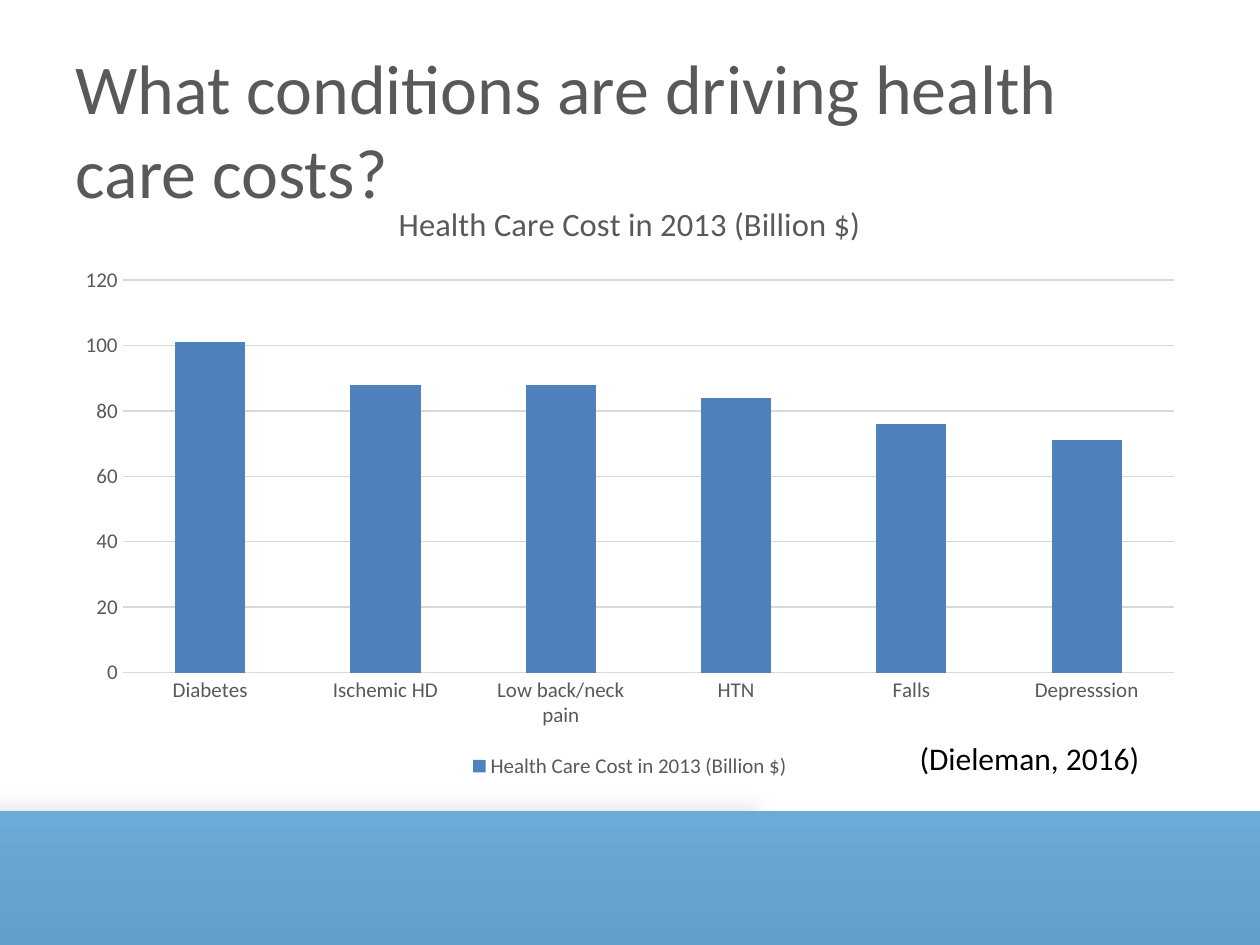
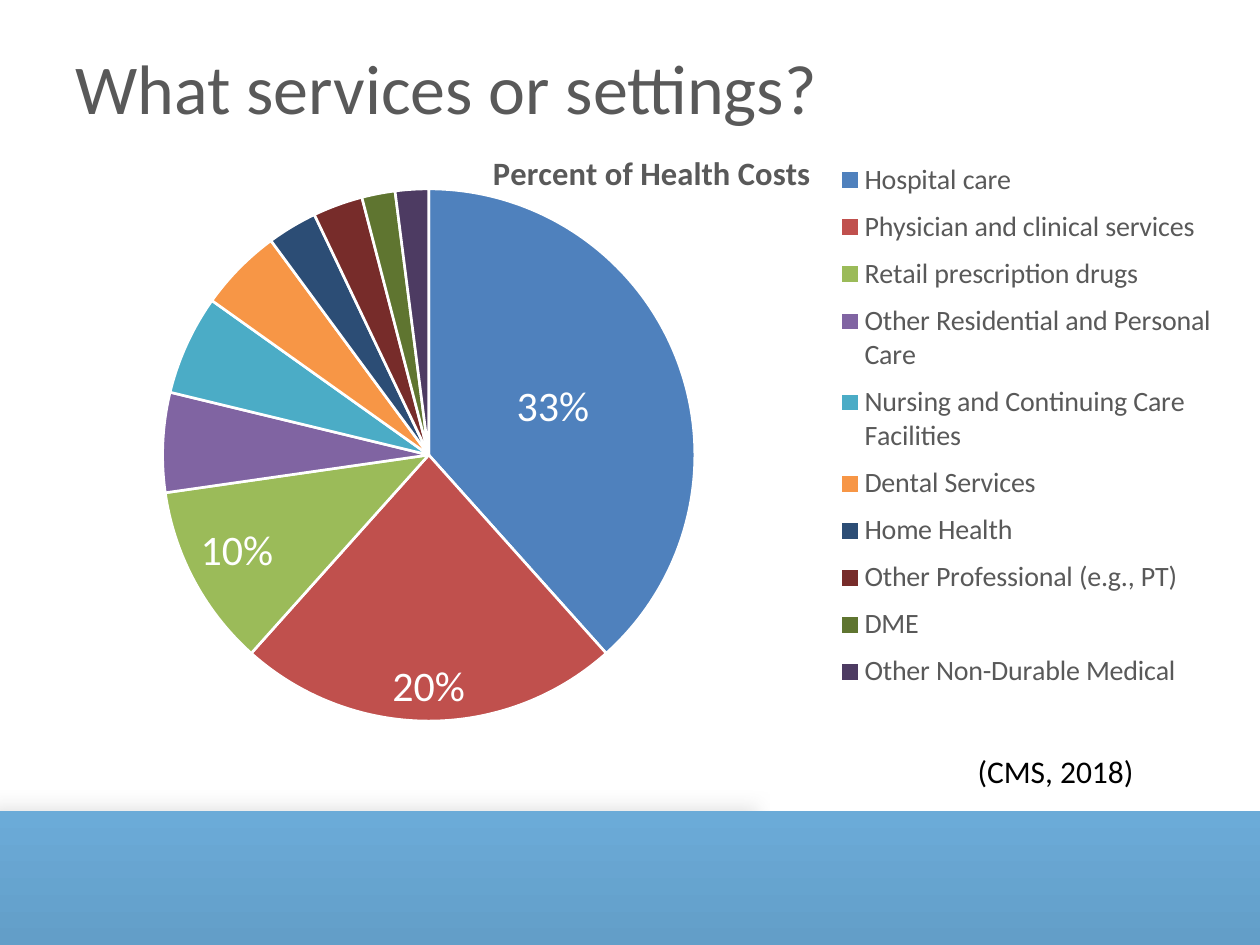
import lxml.etree
import pptx
import pptx.chart.data
import pptx.dml.color
import pptx.enum.chart
import pptx.enum.shapes
import pptx.enum.text
import pptx.oxml
import pptx.oxml.ns
import pptx.util

PX = 9144
FONT = "Calibri"
COLORS = {"text": "595959", "source": "000000", "rule": "D9D9D9", "white": "FFFFFF",
          "bar": "4F81BD", "band_top": "6BABD8", "band_end": "639EC8", "shadow": "BFBFBF"}
SLICES = ["4F81BD", "C0504D", "9BBB59", "8064A2", "4BACC6",
          "F79646", "2C4D75", "772C2A", "5F7530", "4D3B62"]
C = pptx.enum.chart
NS = 'xmlns:%s="%s"'


def rgb(value):
    return pptx.dml.color.RGBColor.from_string(value)


def style(font, color, size, bold=False):
    for key, value in {"name": FONT, "size": pptx.util.Pt(size), "bold": bold}.items():
        setattr(font, key, value)
    font.color.rgb = rgb(COLORS[color])


pages = [
    {"title": "What conditions are driving health care costs?",
     "series": "Health Care Cost in 2013 (Billion $)",
     "type": C.XL_CHART_TYPE.COLUMN_STACKED, "box": (50, 140, 900, 482),
     "data": {"Diabetes": 101, "Ischemic HD": 88, "Low back/neck pain": 88,
              "HTN": 84, "Falls": 76, "Depresssion": 71},
     "bold": False, "legend_size": 12,
     "source": "(Dieleman, 2016)", "source_box": (720, 582, 230, 40)},
    {"title": "What services or settings?",
     "series": "Percent of Health Costs",
     "type": C.XL_CHART_TYPE.PIE, "box": (-54, 99, 1143, 509),
     "data": {"Hospital care": 38, "Physician and clinical services": 23,
              "Retail prescription drugs": 11, "Other Residential and Personal Care": 6,
              "Nursing and Continuing Care Facilities": 6, "Dental Services": 5,
              "Home Health": 3, "Other Professional (e.g., PT)": 3, "DME": 2,
              "Other Non-Durable Medical": 2},
     "bold": True, "legend_size": 16,
     "source": "(CMS, 2018)", "source_box": (766, 592, 172, 40)},
]

prs = pptx.Presentation()
prs.slide_width, prs.slide_height = 1000 * PX, 750 * PX
charts = []

for page in pages:
    s = prs.slides.add_slide(prs.slide_layouts[5])

    band = s.shapes.add_shape(pptx.enum.shapes.MSO_SHAPE.RECTANGLE,
                              0, 644 * PX, 1000 * PX, 106 * PX)
    band.line.fill.background()
    band.fill.gradient()
    band.fill.gradient_angle = 270
    for stop, key in zip(band.fill.gradient_stops, ("band_top", "band_end")):
        stop.color.rgb = rgb(COLORS[key])
    band.shadow.inherit = False
    effects = band._element.spPr.find(pptx.oxml.ns.qn("a:effectLst"))
    effects.append(pptx.oxml.parse_xml(
        f'<a:outerShdw {pptx.oxml.ns.nsdecls("a")} blurRad="137160" dist="88900" '
        'dir="11820000" sx="61000" algn="bl" rotWithShape="0">'
        f'<a:srgbClr val="{COLORS["shadow"]}"><a:alpha val="43000"/></a:srgbClr></a:outerShdw>'))

    sp = s.shapes.title
    sp.left, sp.top, sp.width, sp.height = (v * PX for v in (50, 30, 900, 125))
    tf = sp.text_frame
    tf.text = page["title"]
    for key, value in {"word_wrap": True, "auto_size": pptx.enum.text.MSO_AUTO_SIZE.NONE,
                       "vertical_anchor": pptx.enum.text.MSO_ANCHOR.TOP}.items():
        setattr(tf, key, value)
    p = tf.paragraphs[0]
    p.alignment = pptx.enum.text.PP_ALIGN.LEFT
    style(p.runs[0].font, "text", 40)

    data = pptx.chart.data.CategoryChartData()
    data.categories = list(page["data"])
    data.add_series(page["series"], list(page["data"].values()))
    chart = s.shapes.add_chart(page["type"], *(v * PX for v in page["box"]), data).chart
    style(chart.font, "source", 10)
    chart.has_title = True
    tf = chart.chart_title.text_frame
    tf.text = page["series"]
    style(tf.paragraphs[0].runs[0].font, "text", 18.6, page["bold"])
    chart.has_legend = True
    chart.legend.position = C.XL_LEGEND_POSITION.BOTTOM
    chart.legend.include_in_layout = False
    style(chart.legend.font, "text", page["legend_size"])
    charts.append(chart)

    sp = s.shapes.add_textbox(*(v * PX for v in page["source_box"]))
    tf = sp.text_frame
    tf.word_wrap = True
    tf.text = page["source"]
    style(tf.paragraphs[0].runs[0].font, "source", 18)

bars, pie = charts

plot = bars.plots[0]
plot.gap_width, plot.overlap, plot.vary_by_categories = 150, 100, False
plot.series[0].format.fill.solid()
plot.series[0].format.fill.fore_color.rgb = rgb(COLORS["bar"])
for axis in (bars.category_axis, bars.value_axis):
    axis.major_tick_mark = axis.minor_tick_mark = C.XL_TICK_MARK.NONE
    style(axis.tick_labels.font, "text", 12)
bars.value_axis.format.line.fill.background()
for line in (bars.category_axis.format.line, bars.value_axis.major_gridlines.format.line):
    line.color.rgb = rgb(COLORS["rule"])
    line.width = pptx.util.Pt(0.75)

plot = pie.plots[0]
plot.vary_by_categories = True
points = plot.series[0].points
for i, color in enumerate(SLICES):
    fmt = points[i].format
    fmt.fill.solid()
    fmt.fill.fore_color.rgb = rgb(color)
    fmt.line.color.rgb = rgb(COLORS["white"])
    fmt.line.width = pptx.util.Pt(1.5)

spot = C.XL_LABEL_POSITION
for i, (text, position) in enumerate([("33%", spot.CENTER), ("20%", spot.INSIDE_END),
                                      ("10%", spot.INSIDE_END)]):
    label = points[i].data_label
    label.text_frame.text = text
    style(label.text_frame.paragraphs[0].runs[0].font, "white", 24)
    label.position = position

plot_area = pie._chartSpace.chart.plotArea
for old in plot_area.findall(pptx.oxml.ns.qn("c:layout")):
    plot_area.remove(old)
legend = pie.legend._element
for old in legend.findall(pptx.oxml.ns.qn("c:layout")):
    legend.remove(old)
for parent, index, target, box in ((plot_area, 0, "inner", (0.16, 0.1, 0.37, 0.83)),
                                   (legend, 1, "", (0.62, 0.04, 0.28, 0.86))):
    layout = lxml.etree.Element(pptx.oxml.ns.qn("c:layout"))
    manual = lxml.etree.SubElement(layout, pptx.oxml.ns.qn("c:manualLayout"))
    values = [("layoutTarget", target)] if target else []
    values += [("xMode", "edge"), ("yMode", "edge")] + list(zip("xywh", box))
    for tag, value in values:
        lxml.etree.SubElement(manual, pptx.oxml.ns.qn("c:" + tag)).set("val", str(value))
    parent.insert(index, layout)

prs.save("out.pptx")
